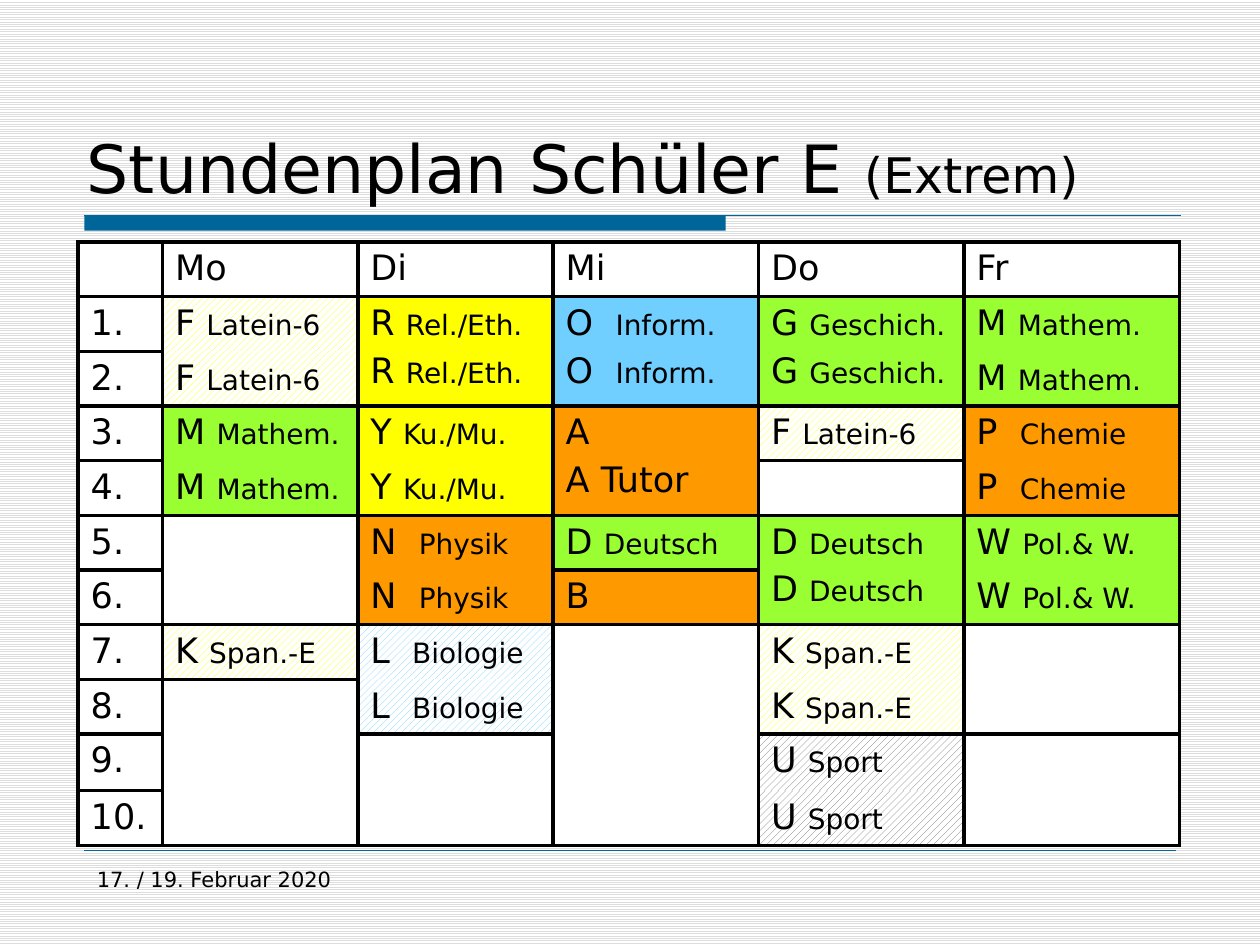
from dataclasses import dataclass

from lxml.etree import SubElement
from pptx import Presentation
from pptx.dml.color import RGBColor
from pptx.enum.dml import MSO_PATTERN as Pattern
from pptx.enum.shapes import MSO_CONNECTOR as Connector, MSO_SHAPE as Shape
from pptx.enum.text import MSO_ANCHOR as Anchor
from pptx.oxml.ns import qn
from pptx.util import Inches, Pt


@dataclass(frozen=True)
class Theme:
    font: str = "DejaVu Sans"
    black: str = "000000"
    white: str = "FFFFFF"
    stripe: str = "DDDDDD"
    accent: str = "006699"
    yellow: str = "FFFF00"
    blue: str = "70CFFF"
    green: str = "99FF33"
    orange: str = "FF9900"
    gray: str = "6E6E6E"
    title: int = 38
    subtitle: int = 28
    letter: int = 20
    subject: int = 16
    footer: int = 12
    border: float = 2.25


THEME = Theme()


@dataclass
class Block:
    """Periods first to last of one day; cells are merged down to merged_to."""
    day: int
    first: int
    last: int
    letter: str = ""
    subject: str = ""
    color: str = THEME.white
    hatched: bool = False
    merged_to: int = 0


def add_span(para, text, size=THEME.letter, color=THEME.black):
    span = para.add_run()
    span.text = text
    span.font.name = THEME.font
    span.font.size = Pt(size)
    span.font.color.rgb = RGBColor.from_string(color)


def set_fill(fill, color, pattern=None):
    if pattern is None:
        fill.solid()
        fill.fore_color.rgb = RGBColor.from_string(color)
    else:
        fill.patterned()
        fill.pattern = pattern
        fill.fore_color.rgb = RGBColor.from_string(color)
        fill.back_color.rgb = RGBColor.from_string(THEME.white)


def set_borders(cell, top=True, bottom=True):
    props = cell._tc.get_or_add_tcPr()
    for side, shown in (("L", True), ("R", True), ("T", top), ("B", bottom)):
        width = Pt(THEME.border) if shown else 0
        line = SubElement(props, qn(f"a:ln{side}"), w=str(width))
        if shown:
            paint = SubElement(line, qn("a:solidFill"))
            SubElement(paint, qn("a:srgbClr"), val=THEME.black)
        else:
            SubElement(line, qn("a:noFill"))


class SlideBuilder:
    def __init__(self, page, theme):
        self.page = page
        self.theme = theme

    def background(self):
        set_fill(self.page.background.fill, self.theme.stripe, Pattern.LIGHT_HORIZONTAL)

    def text(self, left, top, width, height, spans, anchor=Anchor.TOP):
        box = self.page.shapes.add_textbox(
            Inches(left), Inches(top), Inches(width), Inches(height))
        frame = box.text_frame
        frame.word_wrap = True
        frame.vertical_anchor = anchor
        for text, size in spans:
            add_span(frame.paragraphs[0], text, size)

    def bar(self, left, top, width, height):
        bar = self.page.shapes.add_shape(
            Shape.RECTANGLE, Inches(left), Inches(top), Inches(width), Inches(height))
        bar.shadow.inherit = False
        set_fill(bar.fill, self.theme.accent)
        bar.line.fill.background()

    def rule(self, left, right, y, weight):
        rule = self.page.shapes.add_connector(
            Connector.STRAIGHT, Inches(left), Inches(y), Inches(right), Inches(y))
        rule.line.color.rgb = RGBColor.from_string(self.theme.accent)
        rule.line.width = Pt(weight)
        SubElement(rule._element.spPr, qn("a:effectLst"))

    def table(self, left, top, widths, heights):
        frame = self.page.shapes.add_table(
            len(heights), len(widths), Inches(left), Inches(top),
            Inches(sum(widths)), Inches(sum(heights)))
        table = frame.table
        table.first_row = table.horz_banding = False
        for column, width in zip(table.columns, widths):
            column.width = Inches(width)
        for row, height in zip(table.rows, heights):
            row.height = Inches(height)
        return table

    def label(self, cell, text):
        set_borders(cell)
        set_fill(cell.fill, self.theme.white)
        if text:
            self.lesson(cell.text_frame.paragraphs[0], text)

    def lesson(self, para, letter, subject=""):
        para.space_before = Pt(0.2 * self.theme.letter)
        add_span(para, letter)
        if subject:
            add_span(para, subject, self.theme.subject)

    def block(self, table, block):
        pattern = Pattern.WIDE_UPWARD_DIAGONAL if block.hatched else None
        for period in range(block.first, block.last + 1):
            cell = table.cell(period, block.day)
            end = max(period, block.merged_to)
            set_borders(cell, period == block.first, end == block.last)
            set_fill(cell.fill, block.color, pattern)
            if not block.letter:
                continue
            if period > block.first and period <= block.merged_to:
                para = table.cell(block.first, block.day).text_frame.add_paragraph()
            else:
                para = cell.text_frame.paragraphs[0]
            self.lesson(para, block.letter, block.subject)
        if block.merged_to:
            table.cell(block.first, block.day).merge(
                table.cell(block.merged_to, block.day))


MO, DI, MI, DO, FR = range(1, 6)
DAYS = ["", "Mo", "Di", "Mi", "Do", "Fr"]
YELLOW, BLUE, GREEN, ORANGE, GRAY = (
    THEME.yellow, THEME.blue, THEME.green, THEME.orange, THEME.gray)

BLOCKS = [
    Block(MO, 1, 2, "F ", "Latein-6", YELLOW, hatched=True),
    Block(MO, 3, 4, "M ", "Mathem.", GREEN),
    Block(MO, 5, 6),
    Block(MO, 7, 7, "K ", "Span.-E", YELLOW, hatched=True),
    Block(MO, 8, 10, merged_to=9),
    Block(DI, 1, 2, "R ", "Rel./Eth.", YELLOW, merged_to=2),
    Block(DI, 3, 4, "Y ", "Ku./Mu.", YELLOW),
    Block(DI, 5, 6, "N  ", "Physik", ORANGE),
    Block(DI, 7, 8, "L  ", "Biologie", BLUE, hatched=True),
    Block(DI, 9, 10),
    Block(MI, 1, 2, "O  ", "Inform.", BLUE, merged_to=2),
    Block(MI, 3, 4, "A", "", ORANGE, merged_to=4),
    Block(MI, 5, 5, "D ", "Deutsch", GREEN),
    Block(MI, 6, 6, "B", "", ORANGE),
    Block(MI, 7, 10, merged_to=9),
    Block(DO, 1, 2, "G ", "Geschich.", GREEN, merged_to=2),
    Block(DO, 3, 3, "F ", "Latein-6", YELLOW, hatched=True),
    Block(DO, 4, 4),
    Block(DO, 5, 6, "D ", "Deutsch", GREEN, merged_to=6),
    Block(DO, 7, 8, "K ", "Span.-E", YELLOW, hatched=True),
    Block(DO, 9, 10, "U ", "Sport", GRAY, hatched=True),
    Block(FR, 1, 2, "M ", "Mathem.", GREEN),
    Block(FR, 3, 4, "P  ", "Chemie", ORANGE),
    Block(FR, 5, 6, "W ", "Pol.& W.", GREEN),
    Block(FR, 7, 8, merged_to=8),
    Block(FR, 9, 10),
]


def main():
    deck = Presentation()
    deck.slide_width, deck.slide_height = Inches(10), Inches(7.5)
    builder = SlideBuilder(deck.slides.add_slide(deck.slide_layouts[6]), THEME)

    # Background and rules
    builder.background()
    builder.bar(0.67, 1.71, 5.09, 0.12)
    builder.rule(0.67, 9.37, 1.71, 0.75)
    builder.rule(0.67, 9.33, 6.75, 0.25)

    # Title
    builder.text(0.59, 0.36, 8.75, 1.33, [("Stundenplan Schüler E ", THEME.title),
                                          ("(Extrem)", THEME.subtitle)], Anchor.BOTTOM)

    # Timetable
    table = builder.table(0.62, 1.92, [0.67, 1.55, 1.55, 1.63, 1.63, 1.71],
                          [0.42] * 9 + [0.45, 0.42])
    for day, name in enumerate(DAYS):
        builder.label(table.cell(0, day), name)
    for period in range(1, 11):
        builder.label(table.cell(period, 0), f"{period}.")
    for block in BLOCKS:
        builder.block(table, block)
    add_span(table.cell(3, MI).text_frame.paragraphs[1], " Tutor")

    # Date
    builder.text(0.67, 6.83, 2.17, 0.52, [("17. / 19. Februar 2020", THEME.footer)])
    deck.save("out.pptx")


if __name__ == "__main__":
    main()
